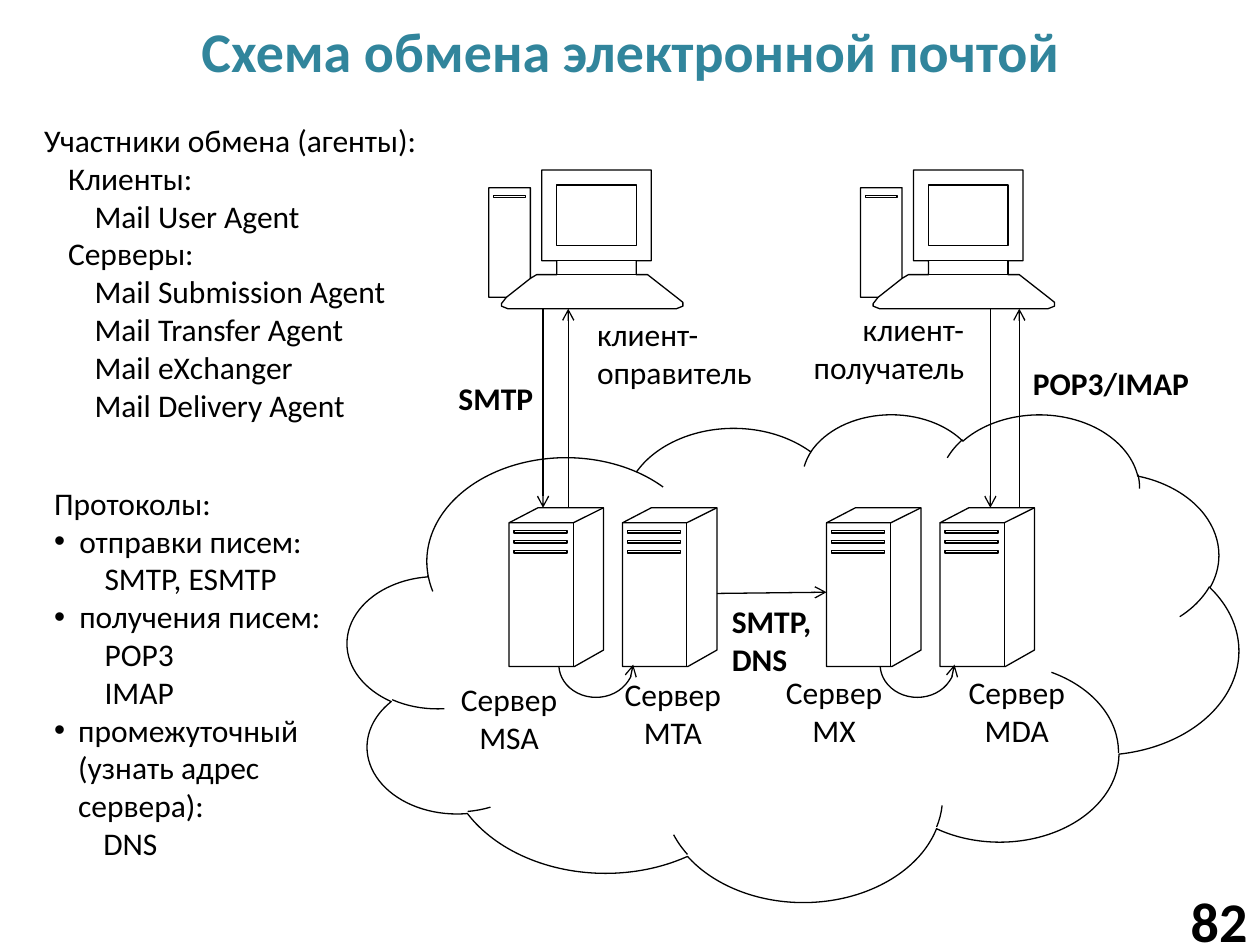
from pptx import Presentation
from pptx.dml.color import RGBColor
from pptx.enum.shapes import MSO_CONNECTOR as Link, MSO_SHAPE as Shape
from pptx.enum.text import MSO_ANCHOR as Anchor, MSO_AUTO_SIZE as Fit, PP_ALIGN as Align
from pptx.oxml.ns import qn
from pptx.util import Inches, Pt
from lxml.etree import SubElement

COLORS = {"title": "31859C", "ink": "000000", "paper": "FFFFFF"}


def color(name):
    return RGBColor.from_string(COLORS[name])


def box(*sides):
    return [Inches(side) for side in sides]


def place(shape, *sides):
    shape.left, shape.top, shape.width, shape.height = box(*sides)


def style(par, size=18, bold=False, align=Align.LEFT, ink="ink"):
    par.alignment = align
    font = par.font
    font.name, font.size, font.bold = "Calibri", Pt(size), bold
    font.color.rgb = color(ink)


def pen(shape):
    shape.line.color.rgb = color("ink")
    shape.line.width = Pt(0.75)


def tip(shape, end):
    SubElement(shape.line._get_or_add_ln(), qn(f"a:{end}End"), type="arrow")


def label(slide, text, *sides, anchor=Anchor.TOP, **look):
    frame = slide.shapes.add_textbox(*box(*sides)).text_frame
    frame.word_wrap = True
    frame.vertical_anchor = anchor
    frame.text = text
    for par in frame.paragraphs:
        style(par, **look)


def outline(slide, left, top, loops):
    """Draw (points, closed) loops, relative to the corner, as one shape."""
    build = None
    for points, closed in loops:
        spots = [box(left + x, top + y) for x, y in points]
        if build is None:
            build = slide.shapes.build_freeform(*spots[0], scale=1.0)
        else:
            build.move_to(*spots[0])
        build.add_line_segments(spots[1:], close=closed)
    shape = build.convert_to_shape()
    shape.shadow.inherit = False
    shape.fill.solid()
    shape.fill.fore_color.rgb = color("paper")
    pen(shape)


def rect(left, top, right, low):
    return [(left, top), (right, top), (right, low), (left, low)], True


def client(slide, left, top):
    body = [(0, 0.14), (0.33, 0.14), (0.33, 0.86), (0.38, 0.83), (0.54, 0.83),
            (0.54, 0.72), (0.42, 0.72), (0.42, 0), (1.29, 0), (1.29, 0.72),
            (1.17, 0.72), (1.17, 0.83), (1.26, 0.83), (1.49, 1.01),
            (1.54, 1.05), (1.54, 1.08), (1.49, 1.1), (0.15, 1.1),
            (0.1, 1.08), (0.1, 1.06), (0.14, 1.01), (0, 1.01)]
    outline(slide, left, top, [
        (body, True),
        ([(0.33, 0.86), (0.14, 1.01)], False),
        rect(0.54, 0.12, 1.17, 0.6),
        rect(0.04, 0.2, 0.29, 0.22),
        rect(0.54, 0.72, 1.17, 0.83),
    ])


def server(slide, left, top):
    body = [(0, 0.12), (0.23, 0), (0.75, 0), (0.75, 1.13), (0.52, 1.26), (0, 1.26)]
    slots = [rect(0.04, y, 0.46, y + 0.02) for y in (0.18, 0.26, 0.34)]
    outline(slide, left, top, [
        (body, True),
        ([(0, 0.12), (0.51, 0.12), (0.75, 0)], False),
        ([(0.51, 0.12), (0.51, 1.26)], False),
        *slots,
    ])


def arrow(slide, start, end):
    line = slide.shapes.add_connector(Link.STRAIGHT, *box(*start, *end))
    pen(line)
    tip(line, "tail")
    SubElement(line._element.spPr, qn("a:effectLst"))


def hop(slide, *sides):
    arc = slide.shapes.add_shape(Shape.ARC, *box(*sides))
    arc.adjustments[0], arc.adjustments[1] = 162, 52.014
    arc.rotation = 90
    arc.shadow.inherit = False
    arc.fill.background()
    pen(arc)
    tip(arc, "head")


def listing(holder, items, *sides):
    """Fill a body placeholder with (text, indent, bullet) lines."""
    place(holder, *sides)
    frame = holder.text_frame
    frame.word_wrap = True
    frame.auto_size = Fit.NONE
    frame.text = "\n".join(text for text, _, _ in items)
    for par, (_, indent, dot) in zip(frame.paragraphs, items):
        style(par)
        par.space_before = Pt(0)
        props = par._p.get_or_add_pPr()
        props.set("marL", str(Inches(indent)))
        props.set("indent", str(-Inches(indent) if dot else 0))
        if dot:
            SubElement(props, qn("a:buFont"), typeface="Arial")
            SubElement(props, qn("a:buChar"), char="•")
        else:
            SubElement(props, qn("a:buNone"))
        # Bullets come before the default run properties
        props.append(props.find(qn("a:defRPr")))


def scheme(slide):
    cloud = slide.shapes.add_shape(Shape.CLOUD, *box(2.76, 3.28, 7.07, 3.87))
    cloud.shadow.inherit = False
    cloud.fill.background()
    pen(cloud)

    # Machines
    for left in (3.88, 6.83):
        client(slide, left, 1.35)
    for left in (4.04, 4.94, 6.56, 7.46):
        server(slide, left, 4.03)

    # Links
    for down, up in ((4.31, 4.51), (7.86, 8.09)):
        arrow(slide, (down, 2.45), (down, 4.03))
        arrow(slide, (up, 4.03), (up, 2.45))
    arrow(slide, (5.69, 4.71), (6.56, 4.7))
    for left in (4.47, 7.02):
        hop(slide, left, 4.98, 0.52, 0.59)

    # Names of machines
    label(slide, "клиент-оправитель", 4.64, 2.45, 1.56, 0.71)
    label(slide, "клиент-получатель", 6.24, 2.41, 1.51, 0.71, align=Align.RIGHT)
    for name, left, top, width in (("MSA", 3.48, 5.35, 1.12), ("MTA", 4.8, 5.31, 1.08),
                                   ("MX", 6.12, 5.29, 1), ("MDA", 7.55, 5.29, 1.04)):
        label(slide, f"Сервер {name}", left, top, width, 0.71, align=Align.CENTER)

    # Protocols on the links
    label(slide, "SMTP", 3.54, 2.96, 0.87, 0.4, bold=True)
    label(slide, "POP3/IMAP", 8.1, 2.84, 1.53, 0.4, bold=True)
    label(slide, "SMTP,\nDNS", 5.71, 4.73, 0.87, 0.71, bold=True)


def main():
    deck = Presentation()
    deck.slide_width, deck.slide_height = box(10, 7.5)
    slide = deck.slides.add_slide(deck.slide_layouts[3])

    # Title and page number
    title = slide.shapes.title
    place(title, 0.28, 0.05, 9.45, 0.69)
    title.text_frame.text = "Схема обмена электронной почтой"
    title.text_frame.vertical_anchor = Anchor.MIDDLE
    style(title.text_frame.paragraphs[0], 32, True, Align.CENTER, "title")
    label(slide, "82", 8.86, 7.1, 1.14, 0.4, anchor=Anchor.MIDDLE,
          size=32, bold=True, align=Align.RIGHT)

    scheme(slide)

    # Lists on the left
    agents = [("Участники обмена (агенты):", 0, False), ("Клиенты:", 0.19, False),
              ("Mail User Agent", 0.4, False), ("Серверы:", 0.19, False)]
    agents += [(f"Mail {role}", 0.4, False) for role in
               ("Submission Agent", "Transfer Agent", "eXchanger", "Delivery Agent")]
    listing(slide.placeholders[1], agents, 0.25, 0.91, 3.21, 2.52)
    rules = [("Протоколы:", 0, False),
             ("отправки писем:", 0.2, True), ("SMTP, ESMTP", 0.4, False),
             ("получения писем:", 0.2, True), ("POP3", 0.4, False), ("IMAP", 0.4, False),
             ("промежуточный (узнать адрес сервера):", 0.19, True), ("DNS", 0.39, False)]
    listing(slide.placeholders[2], rules, 0.33, 3.79, 2.64, 3.13)

    deck.save("out.pptx")


if __name__ == "__main__":
    main()
